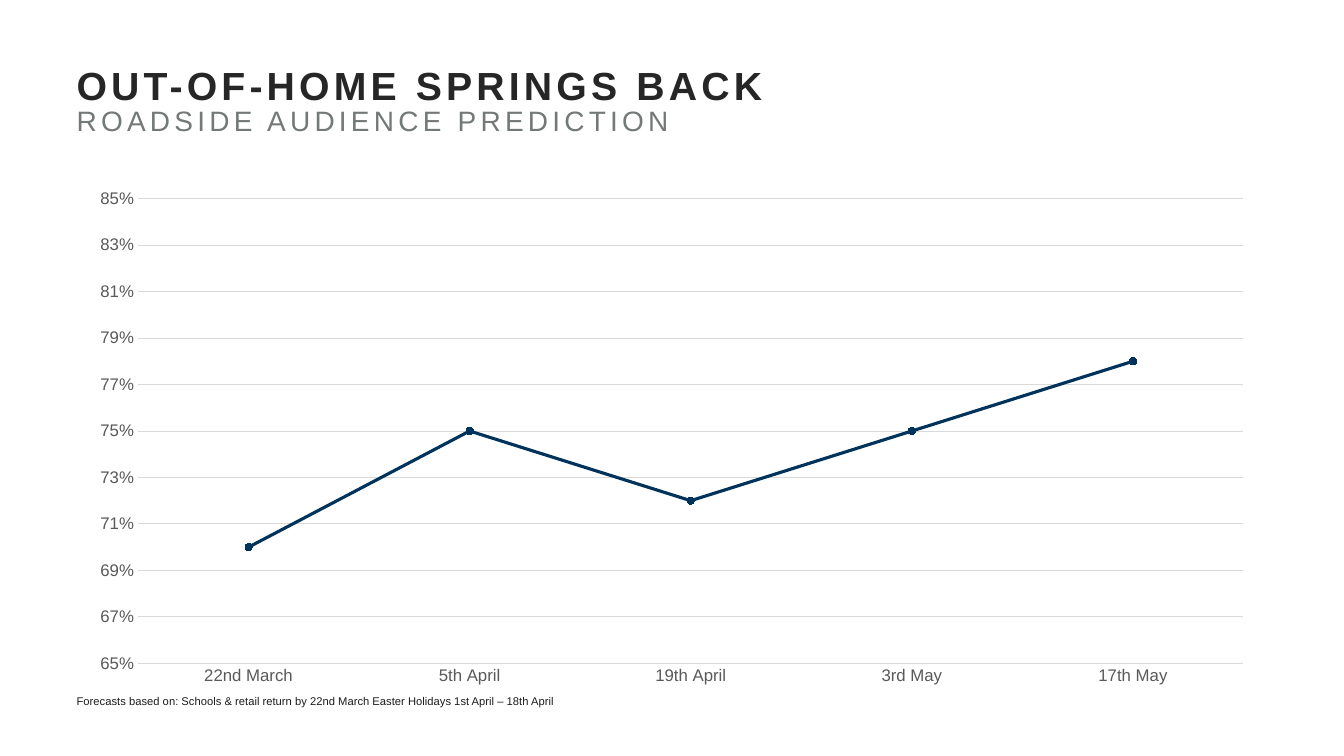
from dataclasses import dataclass

from pptx import Presentation
from pptx import util as u
from pptx.chart.data import CategoryChartData
from pptx.dml.color import RGBColor
from pptx.enum import chart as ch
from pptx.enum import text


@dataclass(frozen=True)
class Theme:
    font: str = "Arial"
    heading: str = "262626"
    subheading: str = "737976"
    note: str = "1C1C1C"
    label: str = "595959"
    grid: str = "D9D9D9"
    series: str = "00335B"
    heading_size: int = 28
    subheading_size: int = 20
    label_size: int = 12
    note_size: int = 8


class SlideBuilder:
    left, width = u.Inches(0.76), u.Inches(11.81)

    def __init__(self, slide, theme):
        self.s, self.theme = slide, theme

    def style(self, font, size, color, bold=False):
        font.name, font.size, font.bold = self.theme.font, u.Pt(size), bold
        font.color.rgb = RGBColor.from_string(color)

    def line(self, fmt, color, width):
        fmt.color.rgb = RGBColor.from_string(color)
        fmt.width = u.Pt(width)

    def text_box(self, top, height, content, spacing):
        """Add a text box without margins and return its paragraph."""
        sp = self.s.shapes.add_textbox(self.left, u.Inches(top), self.width, u.Inches(height))
        tf = sp.text_frame
        tf.word_wrap = True
        tf.vertical_anchor = text.MSO_ANCHOR.TOP
        tf.margin_left = tf.margin_right = tf.margin_top = tf.margin_bottom = 0
        p = tf.paragraphs[0]
        p.text = content
        p.line_spacing = spacing
        return p

    def title(self, heading, subheading):
        t = self.theme
        p = self.text_box(0.68, 1.1, f"{heading}\v{subheading}", 0.85)
        first, second = p.runs
        self.style(first.font, t.heading_size, t.heading, bold=True)
        self.style(second.font, t.subheading_size, t.subheading)
        for r in p.runs:
            r.font._element.set("spc", "300")

    def footnote(self, content):
        p = self.text_box(6.9, 0.39, content, 0.9)
        self.style(p.runs[0].font, self.theme.note_size, self.theme.note)

    def line_chart(self, points):
        t = self.theme
        data = CategoryChartData(number_format="0%")
        data.categories = list(points)
        data.add_series("Series 1", list(points.values()))
        chart = self.s.shapes.add_chart(
            ch.XL_CHART_TYPE.LINE_MARKERS, self.left, u.Inches(1.78),
            self.width, u.Inches(5.12), data).chart
        chart.has_legend = chart.has_title = False
        self.style(chart.font, t.label_size, t.label)

        for axis in (chart.category_axis, chart.value_axis):
            axis.major_tick_mark = axis.minor_tick_mark = ch.XL_TICK_MARK.NONE
            self.style(axis.tick_labels.font, t.label_size, t.label)
        self.line(chart.category_axis.format.line, t.grid, 0.75)

        values = chart.value_axis
        values.minimum_scale, values.maximum_scale, values.major_unit = 0.65, 0.85, 0.02
        values.tick_labels.number_format = "0%"
        values.tick_labels.number_format_is_linked = False
        values.format.line.fill.background()
        self.line(values.major_gridlines.format.line, t.grid, 0.75)

        chart.plots[0].vary_by_categories = False
        series = chart.plots[0].series[0]
        series.smooth = False
        self.line(series.format.line, t.series, 2.25)
        marker = series.marker
        marker.style, marker.size = ch.XL_MARKER_STYLE.CIRCLE, 5
        marker.format.fill.solid()
        marker.format.fill.fore_color.rgb = RGBColor.from_string(t.series)
        self.line(marker.format.line, t.series, 0.75)


def main():
    prs = Presentation()
    prs.slide_width, prs.slide_height = u.Inches(13.33), u.Inches(7.5)
    slide = SlideBuilder(prs.slides.add_slide(prs.slide_layouts[6]), Theme())
    slide.title("OUT-OF-HOME SPRINGS BACK", "ROADSIDE AUDIENCE PREDICTION")
    slide.line_chart({"22nd March": 0.7, "5th April": 0.75, "19th April": 0.72,
                      "3rd May": 0.75, "17th May": 0.78})
    slide.footnote("Forecasts based on: Schools & retail return by 22nd March "
                   "Easter Holidays 1st April – 18th April")
    prs.save("out.pptx")


if __name__ == "__main__":
    main()
